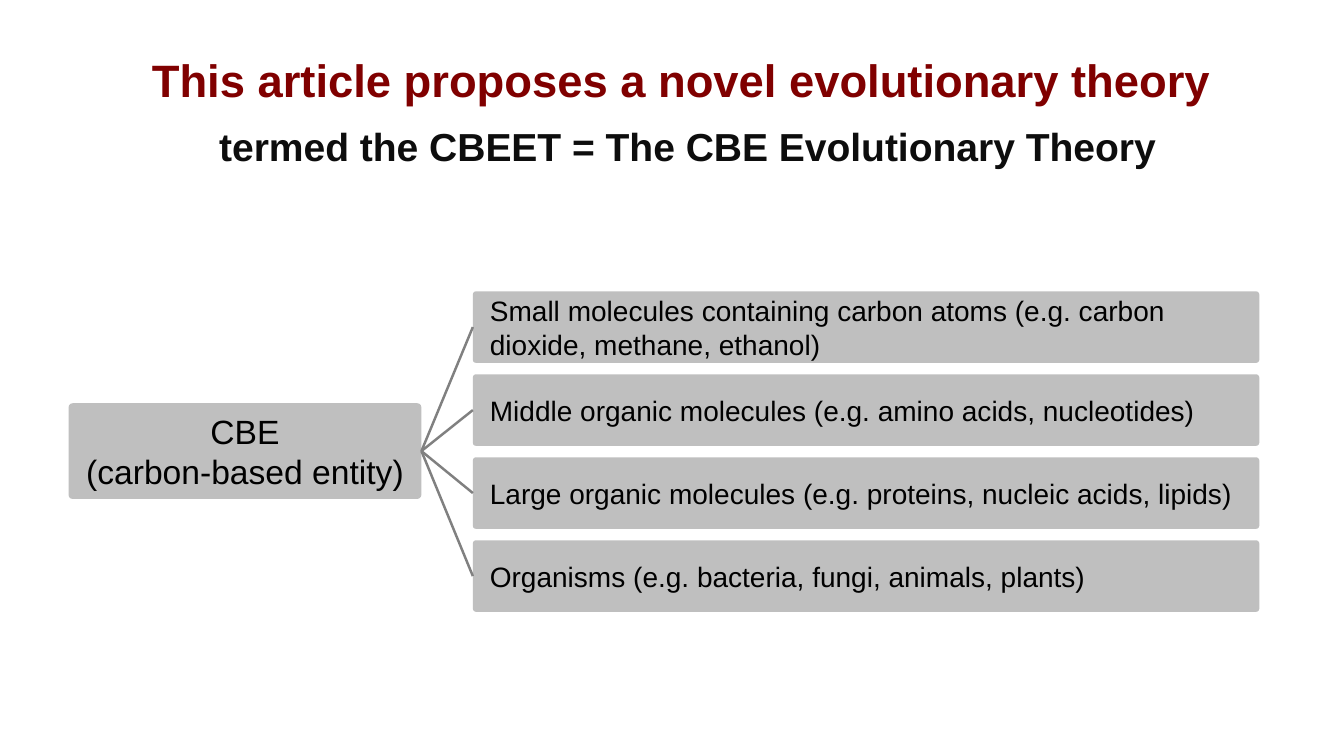
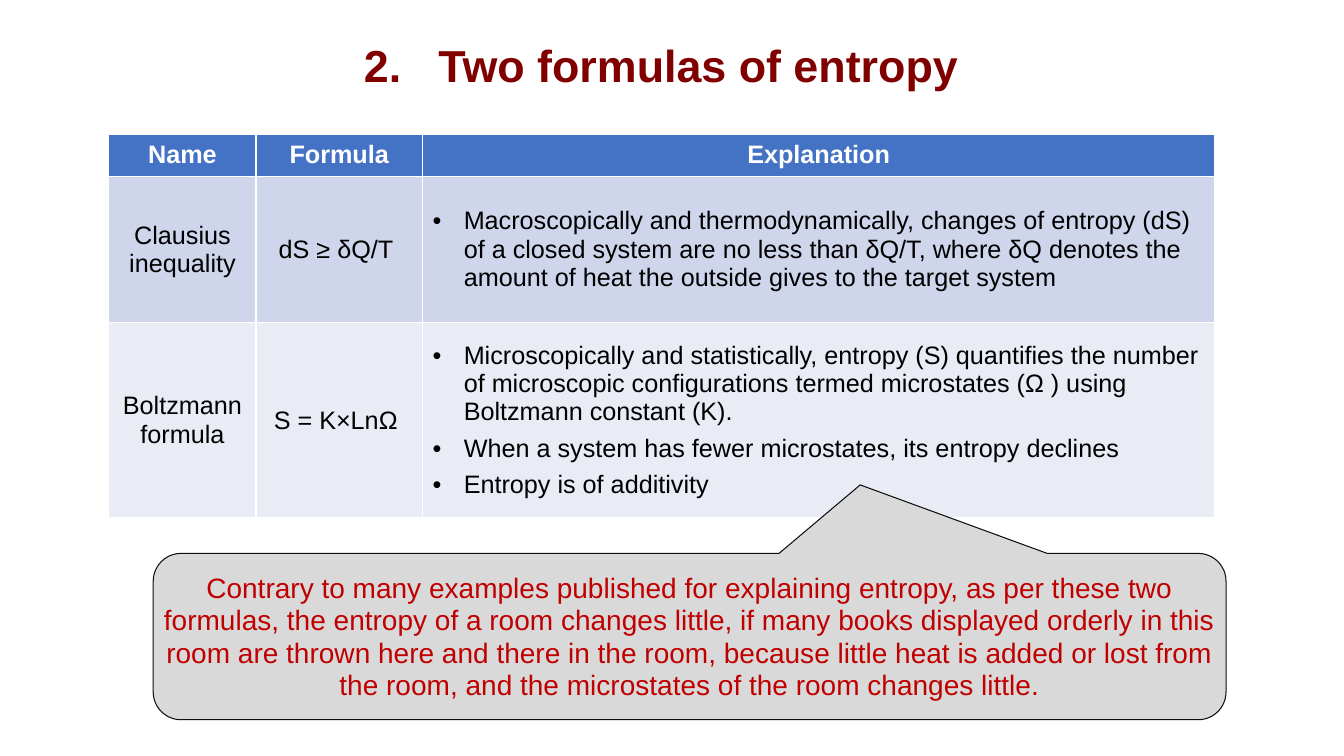
from dataclasses import dataclass

from lxml import etree
from pptx import Presentation
from pptx.dml.color import RGBColor
from pptx.enum.shapes import MSO_CONNECTOR, MSO_SHAPE
from pptx.enum.text import MSO_ANCHOR, MSO_AUTO_SIZE, PP_ALIGN
from pptx.oxml.ns import qn
from pptx.util import Inches, Pt

CENTER, LEFT = PP_ALIGN.CENTER, PP_ALIGN.LEFT
MIDDLE = MSO_ANCHOR.MIDDLE
ROUND_RECT = MSO_SHAPE.ROUNDED_RECTANGLE
CALLOUT = MSO_SHAPE.ROUNDED_RECTANGULAR_CALLOUT
TITLE_ONLY = 5


@dataclass(frozen=True)
class Theme:
    font: str = "Arial"
    maroon: str = "800000"
    red: str = "C00000"
    ink: str = "0D0D0D"
    black: str = "000000"
    white: str = "FFFFFF"
    box: str = "BFBFBF"
    branch: str = "808080"
    note: str = "D9D9D9"
    header: str = "4472C4"
    bands: tuple = ("CFD5EA", "E9EBF5")
    title: float = 32
    lead: float = 32.4
    sublead: float = 27.9
    root: float = 24
    body: float = 20
    cell: float = 18


T = Theme()

LEAD = "This article proposes a novel evolutionary theory "
SUBLEAD = "termed the CBEET = The CBE Evolutionary Theory"
ROOT = ["CBE", "(carbon-based entity)"]
LEAVES = [
    "Small molecules containing carbon atoms (e.g. carbon dioxide, methane, ethanol)",
    "Middle organic molecules (e.g. amino acids, nucleotides)",
    "Large organic molecules (e.g. proteins, nucleic acids, lipids)",
    "Organisms (e.g. bacteria, fungi, animals, plants)",
]

ENTROPY_TITLE = "2.   Two formulas of entropy"
HEADER = ["Name", "Formula", "Explanation"]
FORMULAS = [
    ("Clausius inequality", "dS ≥ δQ/T ", [
        "Macroscopically and thermodynamically, changes of entropy (dS) of a closed "
        "system are no less than δQ/T, where δQ denotes the amount of heat the "
        "outside gives to the target system",
    ]),
    ("Boltzmann formula", "S = K×LnΩ ", [
        "Microscopically and statistically, entropy (S) quantifies the number of "
        "microscopic configurations termed microstates (Ω ) using Boltzmann "
        "constant (K).",
        "When a system has fewer microstates, its entropy declines",
        "Entropy is of additivity",
    ]),
]
COLUMNS = [1.46, 1.65, 7.86]
ROWS = [0.42, 1.45, 1.94]
NOTE = (
    "Contrary to many examples published for explaining entropy, as per these two "
    "formulas, the entropy of a room changes little, if many books displayed orderly "
    "in this room are thrown here and there in the room, because little heat is added "
    "or lost from the room, and the microstates of the room changes little."
)


def rgb(color):
    return RGBColor.from_string(color)


def add_run(p, text, size, color, bold=False):
    r = p.add_run()
    r.text = text
    r.font.name, r.font.size, r.font.bold = T.font, Pt(size), bold
    r.font.color.rgb = rgb(color)


def write(tf, lines, size, color, bold=False, align=CENTER, spacing=None, after=None):
    """Write one paragraph per line and return the paragraphs."""
    for i, line in enumerate(lines):
        p = tf.add_paragraph() if i else tf.paragraphs[0]
        p.alignment, p.line_spacing, p.space_after = align, spacing, after
        add_run(p, line, size, color, bold)
    return tf.paragraphs


def add_bullet(p, indent=0.31):
    pPr = p._p.get_or_add_pPr()
    pPr.set("marL", str(Inches(indent)))
    pPr.set("indent", str(-Inches(indent)))
    etree.SubElement(pPr, qn("a:buFont")).set("typeface", T.font)
    etree.SubElement(pPr, qn("a:buChar")).set("char", "•")


def add_titled_slide(prs, box, spacing):
    """Return a slide and the empty, centred paragraph of its title."""
    s = prs.slides.add_slide(prs.slide_layouts[TITLE_ONLY])
    title = s.shapes.title
    title.left, title.top, title.width, title.height = map(Inches, box)
    tf = title.text_frame
    tf.auto_size, tf.word_wrap = MSO_AUTO_SIZE.NONE, True
    tf.vertical_anchor = MIDDLE
    p = tf.paragraphs[0]
    p.alignment, p.line_spacing = CENTER, spacing
    return s, p


def add_box(s, kind, box, fill, adjustments, line=None, side_insets=(0.1, 0.1)):
    sp = s.shapes.add_shape(kind, *map(Inches, box))
    sp.shadow.inherit = False
    for i, value in enumerate(adjustments):
        sp.adjustments[i] = value
    sp.fill.solid()
    sp.fill.fore_color.rgb = rgb(fill)
    if line:
        sp.line.color.rgb, sp.line.width = rgb(line), Pt(0.75)
    else:
        sp.line.fill.background()
    tf = sp.text_frame
    tf.word_wrap, tf.vertical_anchor = True, MIDDLE
    tf.margin_left, tf.margin_right = map(Inches, side_insets)
    return sp


def add_branch(s, root, leaf):
    line = s.shapes.add_connector(MSO_CONNECTOR.STRAIGHT, 0, 0, 0, 0)
    line.begin_connect(root, 3)
    line.end_connect(leaf, 1)
    line.line.color.rgb, line.line.width = rgb(T.branch), Pt(1.75)
    etree.SubElement(line._element.spPr, qn("a:effectLst"))


def build_theory(prs):
    s, p = add_titled_slide(prs, (1.07, 0.58, 11.5, 0.95), Pt(45))
    add_run(p, LEAD, T.lead, T.maroon, True)
    p.add_line_break()
    add_run(p, SUBLEAD, T.sublead, T.ink, True)

    corner = [0.044]
    root = add_box(s, ROUND_RECT, (0.68, 4, 3.5, 0.95), T.box, corner)
    write(root.text_frame, ROOT, T.root, T.black)

    top, bottom, height = 2.89, 6.07, 0.71
    pitch = (bottom - top - height) / (len(LEAVES) - 1)
    for i, text in enumerate(LEAVES):
        leaf = add_box(s, ROUND_RECT, (4.69, top + i * pitch, 7.8, height),
                       T.box, corner, side_insets=(0.16, 0.1))
        write(leaf.text_frame, [text], T.body, T.black, align=LEFT)
        add_branch(s, root, leaf)


def add_formula_table(s):
    rows = [HEADER, *FORMULAS]
    frame = s.shapes.add_table(len(rows), len(HEADER), Inches(1.08), Inches(1.33),
                               Inches(sum(COLUMNS)), Inches(sum(ROWS)))
    table = frame.table
    for column, width in zip(table.columns, COLUMNS):
        column.width = Inches(width)
    for row, height in zip(table.rows, ROWS):
        row.height = Inches(height)
    for i, values in enumerate(rows):
        head = i == 0
        for j, value in enumerate(values):
            cell = table.cell(i, j)
            cell.vertical_anchor = MIDDLE
            cell.fill.solid()
            cell.fill.fore_color.rgb = rgb(T.header if head else T.bands[i - 1])
            bulleted = isinstance(value, list)
            paragraphs = write(cell.text_frame, value if bulleted else [value], T.cell,
                               T.white if head else T.black, head,
                               LEFT if bulleted else CENTER, after=Pt(6))
            if bulleted:
                for p in paragraphs:
                    add_bullet(p)


def build_entropy(prs):
    s, p = add_titled_slide(prs, (1.42, 0.37, 10.28, 0.61), 0.9)
    add_run(p, ENTROPY_TITLE, T.title, T.maroon, True)
    add_formula_table(s)
    note = add_box(s, CALLOUT, (1.52, 5.49, 10.64, 1.65), T.note,
                   [0.159, -0.912, 0.167], T.ink, (0, 0))
    write(note.text_frame, [NOTE], T.body, T.red, spacing=Pt(23))


def main():
    prs = Presentation()
    prs.slide_width, prs.slide_height = Inches(13.33), Inches(7.5)
    build_theory(prs)
    build_entropy(prs)
    prs.save("out.pptx")


if __name__ == "__main__":
    main()
